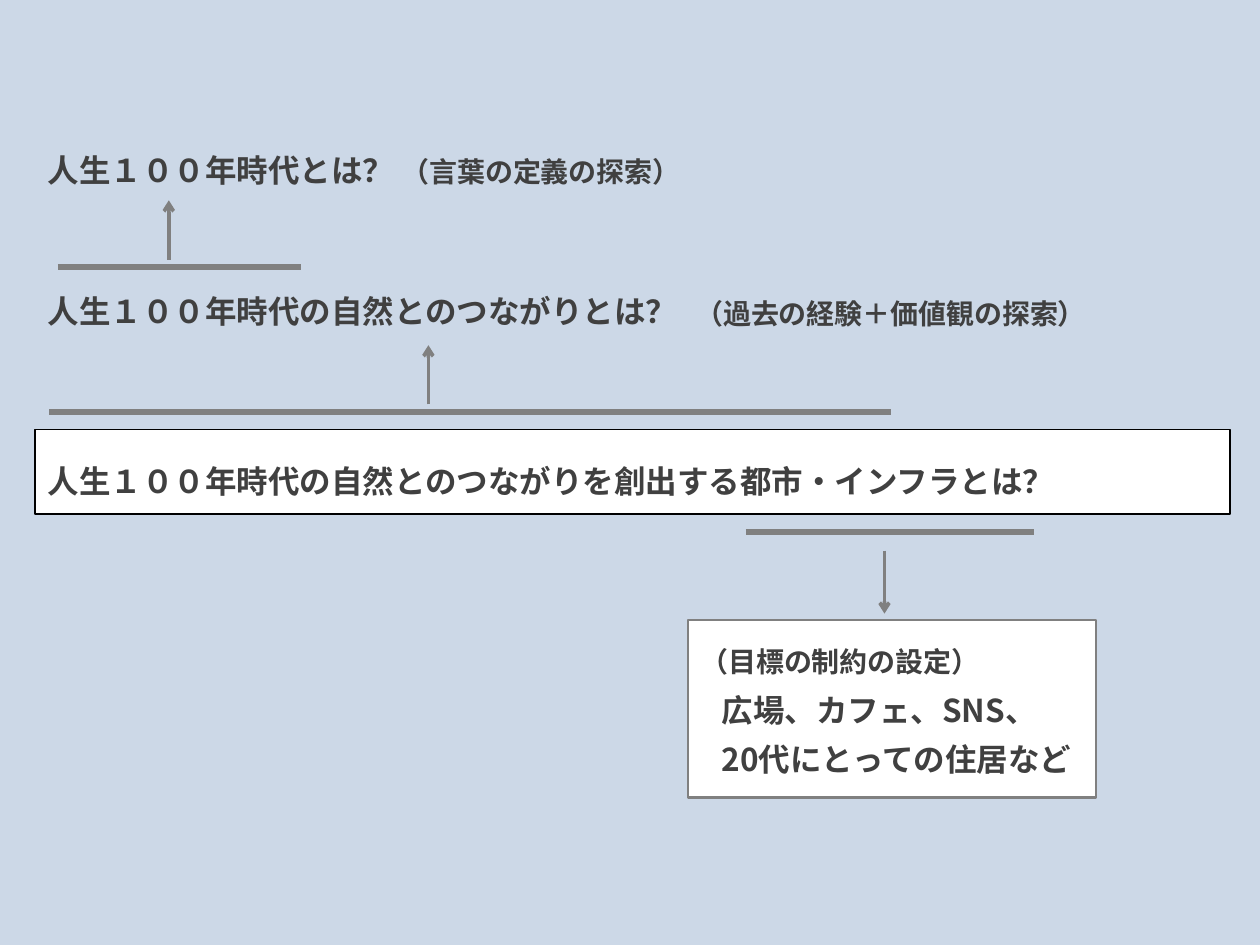
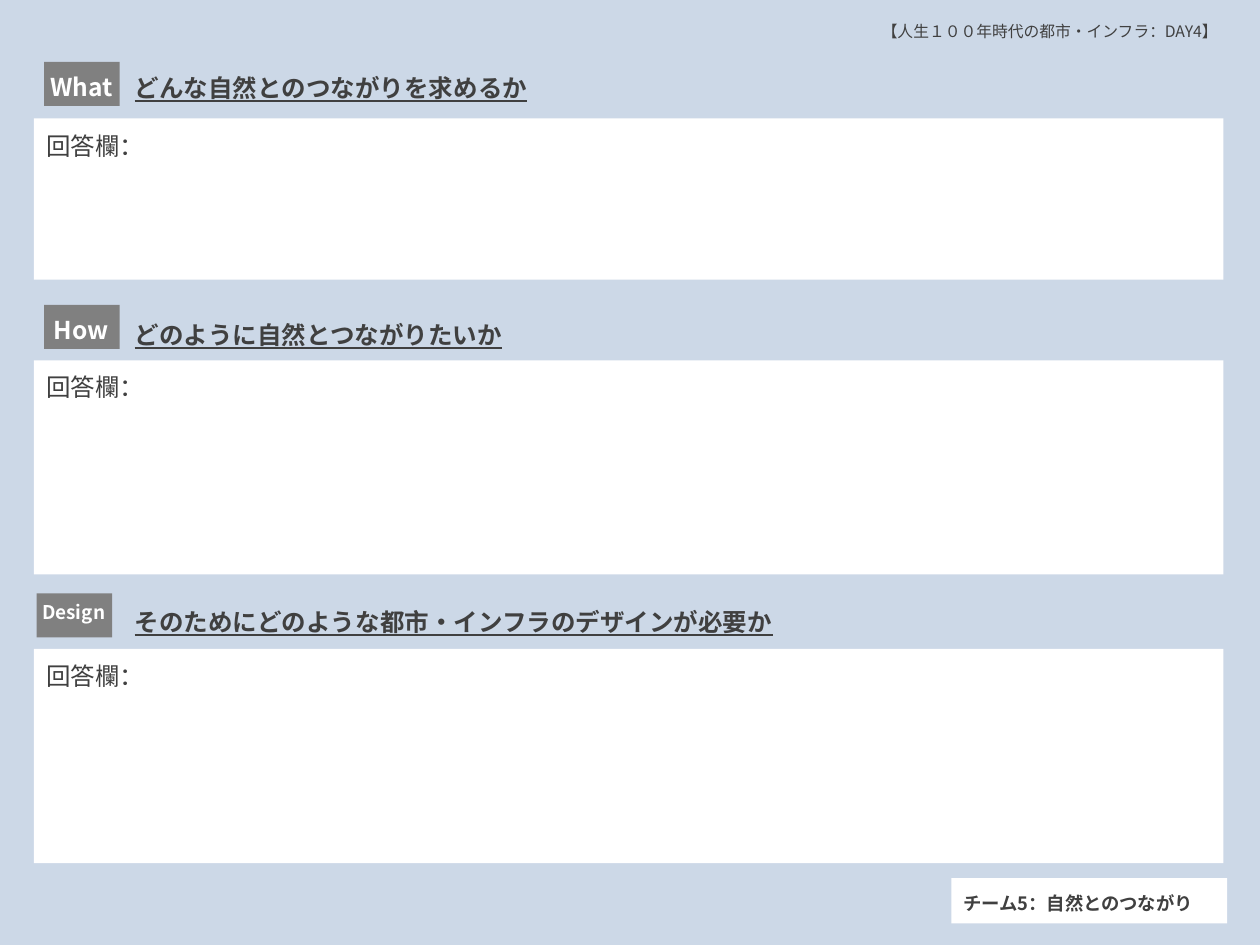
import pptx
import pptx.util
import pptx.dml.color
import pptx.enum.shapes
import pptx.enum.text
import lxml.etree
from pptx.oxml.ns import qn

FONT = "Noto Sans CJK JP"
SKY, WHITE, BLACK = "CCD8E7", "FFFFFF", "000000"
INK, GREY = "404040", "808080"
COLS, ROWS = 100, 75
CELL = pptx.util.Inches(0.1)
Pt = pptx.util.Pt
ALIGN = pptx.enum.text.PP_ALIGN
ANCHOR = pptx.enum.text.MSO_ANCHOR
WIDE = 94.8  # columns of a question line


def grid(*cells):
    """Turn columns and rows into slide lengths."""
    return [round(n * CELL) for n in cells]


def color(code):
    return pptx.dml.color.RGBColor.from_string(code)


def write(shape, text, size=18, ink=INK, bold=True, line=False,
          center=False, middle=False, lead=1.2):
    """Fill a shape with text, one paragraph for each line."""
    frame = shape.text_frame
    frame.word_wrap = True
    frame.vertical_anchor = ANCHOR.MIDDLE if middle else ANCHOR.TOP
    frame.text = text
    for para in frame.paragraphs:
        para.alignment = ALIGN.CENTER if center else ALIGN.LEFT
        para.line_spacing = lead
        for run in para.runs:
            font = run.font
            font.size, font.bold = Pt(size), bold
            if line:
                font.underline = True
            font.color.rgb = color(ink)
            font.name = FONT
            east = lxml.etree.SubElement(run.font._element, qn("a:ea"))
            east.set("typeface", FONT)


def label(slide, at, text, **style):
    write(slide.shapes.add_textbox(*grid(*at)), text, **style)


def panel(slide, at, fill=WHITE, edge=None, weight=1):
    kind = pptx.enum.shapes.MSO_SHAPE.RECTANGLE
    box = slide.shapes.add_shape(kind, *grid(*at))
    box.shadow.inherit = False
    box.fill.solid()
    box.fill.fore_color.rgb = color(fill)
    if edge:
        box.line.color.rgb = color(edge)
        box.line.width = Pt(weight)
    else:
        box.line.fill.background()
    return box


def stroke(slide, start, end, weight, arrow=False):
    kind = pptx.enum.shapes.MSO_CONNECTOR.STRAIGHT
    line = slide.shapes.add_connector(kind, *grid(*start, *end))
    line.line.color.rgb = color(GREY)
    line.line.width = Pt(weight)
    if arrow:
        tip = lxml.etree.SubElement(line.line._get_or_add_ln(), qn("a:tailEnd"))
        tip.set("type", "arrow")
    lxml.etree.SubElement(line._element.spPr, qn("a:effectLst"))


def branch(slide, left, right, row, stem, start, end):
    """Underline a phrase and point from it to what it leads to."""
    stroke(slide, (left, row), (right, row), 3.5)
    stroke(slide, (stem, start), (stem, end), 2, arrow=True)


def page(deck):
    slide = deck.slides.add_slide(deck.slide_layouts[6])
    slide.background.fill.solid()
    slide.background.fill.fore_color.rgb = color(SKY)
    return slide


def themes(deck):
    slide = page(deck)
    ask = dict(middle=True, lead=Pt(32))
    note = dict(ask, size=16)

    goal = panel(slide, (2.8, 34.1, WIDE, 6.7), edge=BLACK)
    write(goal, "人生１００年時代の自然とのつながりを創出する都市・インフラとは？", **ask)
    label(slide, (2.8, 20.6, WIDE, 6.7),
          "人生１００年時代の自然とのつながりとは？", **ask)
    label(slide, (2.8, 9.4, WIDE, 6.7), "人生１００年時代とは？", **ask)

    branch(slide, 4.6, 23.9, 21.2, 13.4, 20.6, 15.9)
    branch(slide, 3.9, 70.7, 32.7, 34, 32.1, 27.4)
    branch(slide, 59.2, 82.1, 42.2, 70.2, 43.7, 48.7)

    label(slide, (28.3, 10.3, 29.3, 4.8), "（言葉の定義の探索）",
          center=True, **note)
    label(slide, (51.9, 21.6, 37.6, 4.8), "（過去の経験＋価値観の探索）",
          center=True, **note)

    panel(slide, (54.6, 49.2, 32.4, 14.1), edge=GREY, weight=1.5)
    label(slide, (54.6, 49.2, 25.1, 4.8), "（目標の制約の設定）", **note)
    label(slide, (56.3, 52.4, 31.6, 10.8),
          "広場、カフェ、SNS、\n20代にとっての住居など", middle=True, lead=Pt(28))


def tag(slide, left, top, word, **style):
    panel(slide, (left, top, 6, 3.5), GREY)
    label(slide, (left - 0.8, top + 0.1, 7.5, 3.5), word,
          ink=WHITE, center=True, **style)


def field(slide, top, high, title, rise):
    """Draw an answer box with its title some rows above."""
    label(slide, (9.7, top - rise, 83.8, 4.5), title, size=14, line=True)
    box = panel(slide, (2.7, top, 94.4, high))
    write(box, "回答欄：", size=14, bold=False)


def answers(deck):
    slide = page(deck)
    label(slide, (69, 0.9, 31, 3.6), "【人生１００年時代の都市・インフラ：DAY4】",
          size=9, bold=False)

    field(slide, 9.4, 12.8, "どんな自然とのつながりを求めるか", 4.6)
    field(slide, 28.6, 17, "どのように自然とつながりたいか", 4.2)
    field(slide, 51.5, 17, "そのためにどのような都市・インフラのデザインが必要か", 4.3)

    tag(slide, 3.5, 4.9, "What", size=14, lead=1.1)
    tag(slide, 3.5, 24.2, "How", size=14, lead=1.1)
    tag(slide, 2.9, 47.1, "Design", size=10.8, lead=1.0)

    team = panel(slide, (75.5, 69.7, 21.9, 3.6))
    write(team, "チーム5：自然とのつながり", size=10.5, middle=True)


def main():
    deck = pptx.Presentation()
    deck.slide_width, deck.slide_height = grid(COLS, ROWS)
    themes(deck)
    answers(deck)
    deck.save("out.pptx")


if __name__ == "__main__":
    main()
